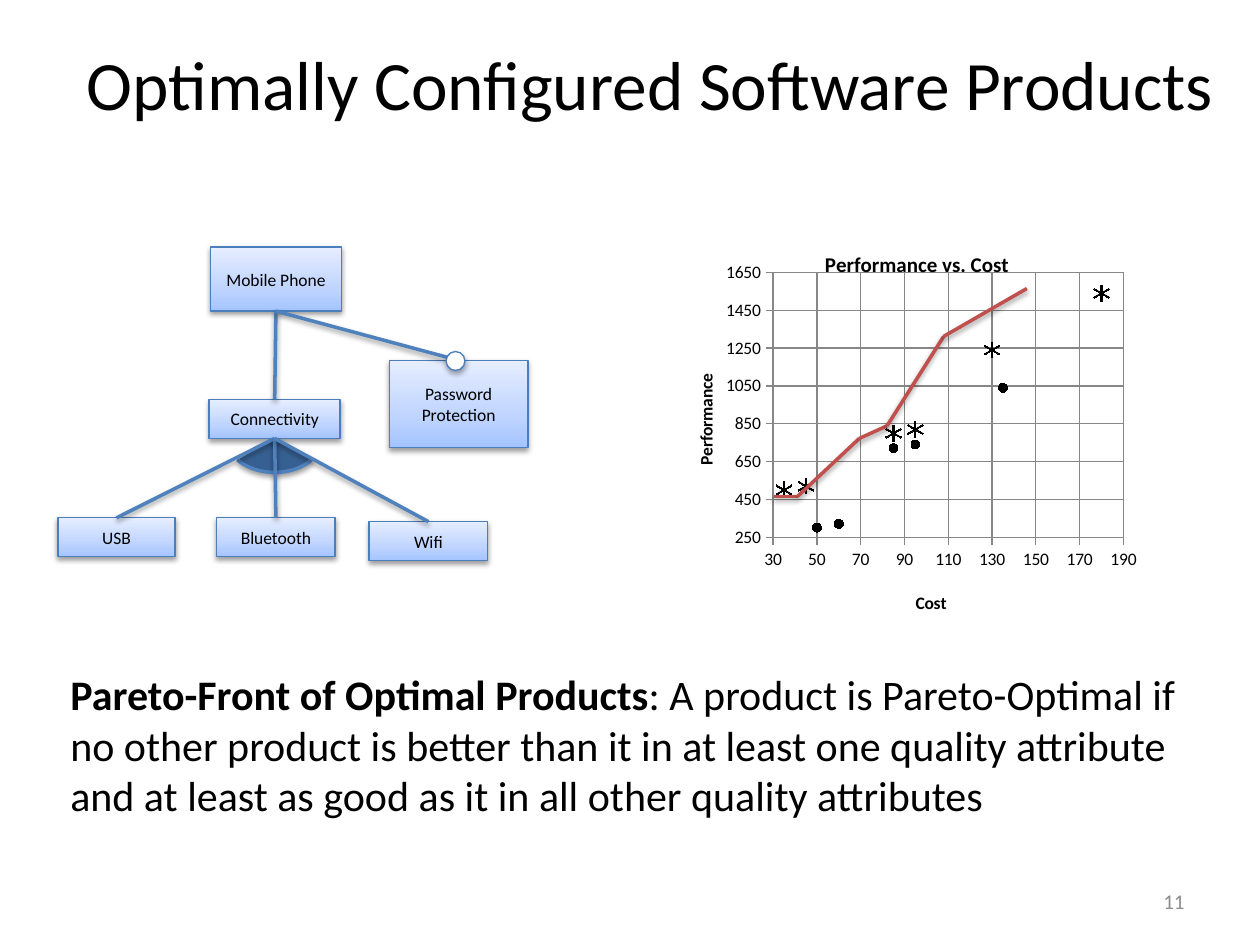
from lxml import etree
from pptx import Presentation
from pptx.chart.data import XyChartData
from pptx.dml.color import RGBColor
from pptx.enum.chart import XL_CHART_TYPE, XL_MARKER_STYLE, XL_TICK_MARK
from pptx.enum.shapes import MSO_CONNECTOR, MSO_SHAPE
from pptx.enum.text import MSO_ANCHOR, PP_ALIGN
from pptx.oxml import parse_xml
from pptx.oxml.ns import nsdecls, qn
from pptx.util import Inches, Pt

LEFT, CENTER, RIGHT = PP_ALIGN.LEFT, PP_ALIGN.CENTER, PP_ALIGN.RIGHT
MIDDLE, TOP = MSO_ANCHOR.MIDDLE, MSO_ANCHOR.TOP
STRAIGHT = MSO_CONNECTOR.STRAIGHT
CIRCLE, STAR = XL_MARKER_STYLE.CIRCLE, XL_MARKER_STYLE.STAR


class Theme:
    font = "Calibri"
    black = RGBColor.from_string("000000")
    white = RGBColor.from_string("FFFFFF")
    gray = RGBColor.from_string("8C8C8C")
    grid = RGBColor.from_string("878787")
    arc = RGBColor.from_string("376092")
    link = RGBColor.from_string("4F81BD")
    border = RGBColor.from_string("4B7EBC")
    front = RGBColor.from_string("C0504D")
    gradient = [(0, "A4C4FF"), (35, "BFD4FF"), (100, "E6EEFF")]
    title, body, number, chart_title, label = 39.6, 24, 12, 12, 10


def write(tf, text, size, color=Theme.black, align=LEFT, anchor=TOP, lead=""):
    tf.word_wrap = True
    tf.vertical_anchor = anchor
    for i, line in enumerate(text.split("\n")):
        p = tf.paragraphs[0] if i == 0 else tf.add_paragraph()
        p.alignment = align
        for part, bold in ((lead if i == 0 else "", True), (line, False)):
            if part:
                r = p.add_run()
                r.text = part
                r.font.name, r.font.size, r.font.bold = Theme.font, Pt(size), bold
                r.font.color.rgb = color


def outline(sp, color, width, alpha=38, dist=1.6):
    sp.line.color.rgb = color
    sp.line.width = Pt(width)
    sp._element.spPr.append(parse_xml(
        f'<a:effectLst {nsdecls("a")}><a:outerShdw blurRad="{Pt(3.1)}" dist="{Pt(dist)}" '
        'dir="5400000" rotWithShape="0"><a:srgbClr val="000000">'
        f'<a:alpha val="{alpha * 1000}"/></a:srgbClr></a:outerShdw></a:effectLst>'))


prs = Presentation()
prs.slide_width, prs.slide_height = Inches(10), Inches(7.5)
slide = prs.slides.add_slide(prs.slide_layouts[5])

title = slide.shapes.title
title.left, title.top, title.width, title.height = map(Inches, (0.5, 0.3, 9.32, 0.71))
write(title.text_frame, "Optimally Configured Software Products", Theme.title,
      align=CENTER, anchor=MIDDLE)

tree = slide.shapes.add_group_shape()
arc = tree.shapes.add_shape(MSO_SHAPE.ARC, *map(Inches, (1.8, 3.21, 0.76, 0.54)))
arc.adjustments[0], arc.adjustments[1] = 16.91, 90.05
arc.fill.solid()
arc.fill.fore_color.rgb = Theme.arc
outline(arc, Theme.link, 2)

features = {
    "Mobile Phone": (1.67, 1.96, 1.04, 0.51),
    "Connectivity": (1.66, 3.17, 1.04, 0.31),
    "Password\nProtection": (3.09, 2.86, 1.1, 0.69),
    "USB": (0.46, 4.11, 0.93, 0.31),
    "Bluetooth": (1.72, 4.11, 0.94, 0.31),
    "Wifi": (2.93, 4.14, 0.94, 0.31),
}
stops = "".join(f'<a:gs pos="{pos * 1000}"><a:srgbClr val="{color}"/></a:gs>'
                for pos, color in Theme.gradient)
for name, box in features.items():
    sp = tree.shapes.add_shape(MSO_SHAPE.RECTANGLE, *map(Inches, box))
    sp._element.spPr.append(parse_xml(
        f'<a:gradFill {nsdecls("a")} rotWithShape="1"><a:gsLst>{stops}</a:gsLst>'
        '<a:lin ang="16200000" scaled="0"/></a:gradFill>'))
    outline(sp, Theme.border, 0.75)
    write(sp.text_frame, name, Theme.label, align=CENTER, anchor=MIDDLE)

links = [
    ("Mobile Phone", "Connectivity"),
    ("Mobile Phone", "Password\nProtection"),
    ("Connectivity", "USB"),
    ("Connectivity", "Bluetooth"),
    ("Connectivity", "Wifi"),
]
for parent, child in links:
    px, py, pw, ph = features[parent]
    cx, cy, cw, ch = features[child]
    ends = (px + pw / 2, py + ph, cx + cw / 2, cy)
    outline(tree.shapes.add_connector(STRAIGHT, *map(Inches, ends)), Theme.link, 2)

definition = slide.shapes.add_textbox(*map(Inches, (0.46, 5.26, 9.24, 1.31)))
write(definition.text_frame,
      ": A product is Pareto-Optimal if no other product is better than it in at least one "
      "quality attribute and at least as good as it in all other quality attributes",
      Theme.body, lead="Pareto-Front of Optimal Products")

optional = slide.shapes.add_shape(MSO_SHAPE.OVAL, *map(Inches, (3.54, 2.79, 0.15, 0.15)))
optional.fill.solid()
optional.fill.fore_color.rgb = Theme.white
outline(optional, Theme.border, 0.75, alpha=35, dist=1.8)

number = slide.shapes.add_textbox(*map(Inches, (7.17, 6.95, 2.33, 0.4)))
write(number.text_frame, "11", Theme.number, color=Theme.gray, align=RIGHT, anchor=MIDDLE)

products = [
    (50, 300, CIRCLE), (60, 320, CIRCLE), (35, 500, STAR), (45, 520, STAR),
    (85, 720, CIRCLE), (95, 740, CIRCLE), (130, 1240, STAR), (135, 1040, CIRCLE),
    (180, 1540, STAR), (85, 800, STAR), (95, 820, STAR),
]
data = XyChartData()
points = data.add_series("Series 1")
for cost, performance, style in products:
    points.add_data_point(cost, performance)
chart = slide.shapes.add_chart(XL_CHART_TYPE.XY_SCATTER,
                               *map(Inches, (5.26, 1.62, 3.81, 3.39)), data).chart
chart.has_legend = False
chart.font.name, chart.font.size = Theme.font, Pt(Theme.label)
chart.font.color.rgb = Theme.black
chart.plots[0].vary_by_categories = False

series = chart.plots[0].series[0]
series.smooth = False
series.format.line.fill.background()
markers = [(series.marker, CIRCLE)]
markers += [(series.points[i].marker, STAR)
            for i, product in enumerate(products) if product[2] == STAR]
for marker, style in markers:
    marker.style = style
    marker.size = 5 if style == CIRCLE else 9
    marker.format.line.color.rgb = Theme.black
    if style == CIRCLE:
        marker.format.fill.solid()
        marker.format.fill.fore_color.rgb = Theme.black
    else:
        marker.format.fill.background()

axes = [(chart.category_axis, "Cost", 30, 190, 20),
        (chart.value_axis, "Performance", 250, 1650, 200)]
for axis, name, low, high, step in axes:
    axis.minimum_scale, axis.maximum_scale, axis.major_unit = low, high, step
    axis.major_tick_mark = XL_TICK_MARK.OUTSIDE
    axis.has_major_gridlines = True
    axis.major_gridlines.format.line.color.rgb = Theme.grid
    axis.format.line.color.rgb = Theme.grid
    axis.has_title = True

labels = [
    (chart.chart_title, "Performance vs. Cost", Theme.chart_title, 0.33, 0.1),
    (chart.category_axis.axis_title, "Cost", Theme.label, 0.52, 0.9),
    (chart.value_axis.axis_title, "Performance", Theme.label, 0.06, 0.39),
]
places = [(chart._chartSpace.chart.plotArea, {"x": 0.23, "y": 0.16, "w": 0.73, "h": 0.62})]
for label, text, size, x, y in labels:
    write(label.text_frame, "", size, lead=text, align=CENTER)
    places.append((label._element, {"x": x, "y": y}))

for element, place in places:
    layout = element.find(qn("c:layout"))
    if layout is None:
        layout = etree.Element(qn("c:layout"))
        text = element.find(qn("c:tx"))
        element.insert(0 if text is None else 1, layout)
    for child in list(layout):
        layout.remove(child)
    manual = etree.SubElement(layout, qn("c:manualLayout"))
    if "w" in place:
        etree.SubElement(manual, qn("c:layoutTarget"), val="inner")
    for key in "xy":
        etree.SubElement(manual, qn(f"c:{key}Mode"), val="edge")
    for key, value in place.items():
        etree.SubElement(manual, qn(f"c:{key}"), val=str(value))

front = [(6.14, 3.94), (6.33, 3.94), (6.82, 3.48), (7.04, 3.38), (7.49, 2.67), (8.15, 2.29)]
for start, end in zip(front, front[1:]):
    outline(slide.shapes.add_connector(STRAIGHT, *map(Inches, start + end)), Theme.front, 2)

prs.save("out.pptx")
